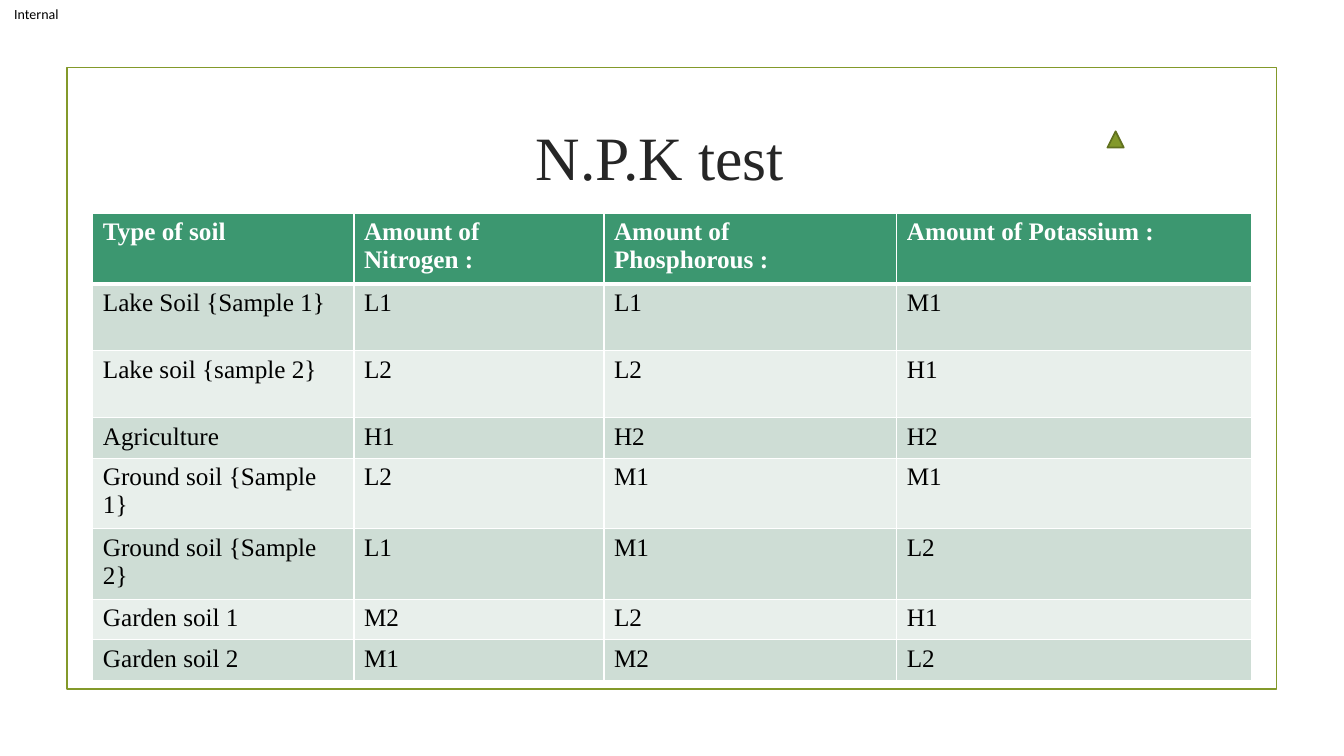
"""Build the N.P.K test slide with its table of soil results."""
from lxml.etree import SubElement as Sub
from pptx import Presentation
from pptx.dml.color import RGBColor
from pptx.enum.shapes import MSO_SHAPE as Shape
from pptx.enum.text import MSO_ANCHOR as Anchor, PP_ALIGN as Align
from pptx.oxml.ns import qn
from pptx.util import Cm, Pt

BLACK = RGBColor(0x00, 0x00, 0x00)
WHITE = RGBColor(0xFF, 0xFF, 0xFF)
INK = RGBColor(0x26, 0x26, 0x26)
OLIVE = RGBColor(0x83, 0x99, 0x2A)
MOSS = RGBColor(0x61, 0x71, 0x1F)
GREEN = RGBColor(0x3C, 0x97, 0x70)
SAGE = RGBColor(0xCE, 0xDD, 0xD5)
MIST = RGBColor(0xE8, 0xEF, 0xEB)
SERIF = "Times New Roman"
TALL, SHORT = 1.69, 0.96

ROWS = [
    (TALL, "Type of soil", "Amount of Nitrogen :", "Amount of Phosphorous :", "Amount of Potassium :"),
    (TALL, "Lake Soil {Sample 1}", "L1", "L1", "M1"),
    (TALL, "Lake soil {sample 2}", "L2", "L2", "H1"),
    (SHORT, "Agriculture", "H1", "H2", "H2"),
    (TALL, "Ground soil {Sample 1}", "L2", "M1", "M1"),
    (TALL, "Ground soil {Sample 2}", "L1", "M1", "L2"),
    (SHORT, "Garden soil 1", "M2", "L2", "H1"),
    (SHORT, "Garden soil 2", "M1", "M2", "L2"),
]
WIDTHS = [6.58, 6.3, 7.38, 8.94]


def style(frame, font, size, color, bold=False):
    for run in frame.paragraphs[0].runs:
        run.font.name = font
        run.font.size = Pt(size)
        run.font.bold = bold
        run.font.color.rgb = color


def edge(cell, side, width):
    line = Sub(cell._tc.get_or_add_tcPr(), qn(f"a:ln{side}"), w=str(Pt(width)))
    Sub(Sub(line, qn("a:solidFill")), qn("a:srgbClr"), val=str(WHITE))


deck = Presentation()
deck.slide_width, deck.slide_height = Cm(33.87), Cm(19.05)
slide = deck.slides.add_slide(deck.slide_layouts[5])
shapes = slide.shapes

title = shapes.title
title.left, title.top, title.width, title.height = Cm(3.3), Cm(2.11), Cm(26.67), Cm(3.63)
title.text_frame.text = "N.P.K test"
title.text_frame.vertical_anchor = Anchor.MIDDLE
title.text_frame.paragraphs[0].alignment = Align.CENTER
style(title.text_frame, SERIF, 44, INK)

border = shapes.add_shape(Shape.RECTANGLE, Cm(1.69), Cm(1.7), Cm(30.48), Cm(15.67))
border.shadow.inherit = False
border.fill.background()
border.line.color.rgb = OLIVE
border.line.width = Pt(1.25)

label = shapes.add_textbox(0, 0, Cm(1.85), Cm(0.71)).text_frame
label.margin_left = Cm(0.36)
label.margin_right = label.margin_top = label.margin_bottom = 0
label.vertical_anchor = Anchor.MIDDLE
label.text = "Internal"
style(label, "Calibri", 10, BLACK)

table = shapes.add_table(len(ROWS), len(WIDTHS), Cm(2.34), Cm(5.37),
                         Cm(sum(WIDTHS)), Cm(sum(row[0] for row in ROWS))).table
for col, width in zip(table.columns, WIDTHS):
    col.width = Cm(width)
for r, (height, *texts) in enumerate(ROWS):
    table.rows[r].height = Cm(height)
    for c, text in enumerate(texts):
        cell = table.cell(r, c)
        cell.text = text
        style(cell.text_frame, SERIF, 18, BLACK if r else WHITE, r == 0)
        for side in "LRTB":
            edge(cell, side, 3 if (r, side) in [(0, "B"), (1, "T")] else 1)
        cell.fill.solid()
        cell.fill.fore_color.rgb = (SAGE if r % 2 else MIST) if r else GREEN

mark = shapes.add_shape(Shape.ISOSCELES_TRIANGLE, Cm(27.91), Cm(3.31), Cm(0.41), Cm(0.41))
mark.shadow.inherit = False
mark.fill.solid()
mark.fill.fore_color.rgb = OLIVE
mark.line.color.rgb = MOSS
mark.line.width = Pt(1.25)

deck.save("out.pptx")
